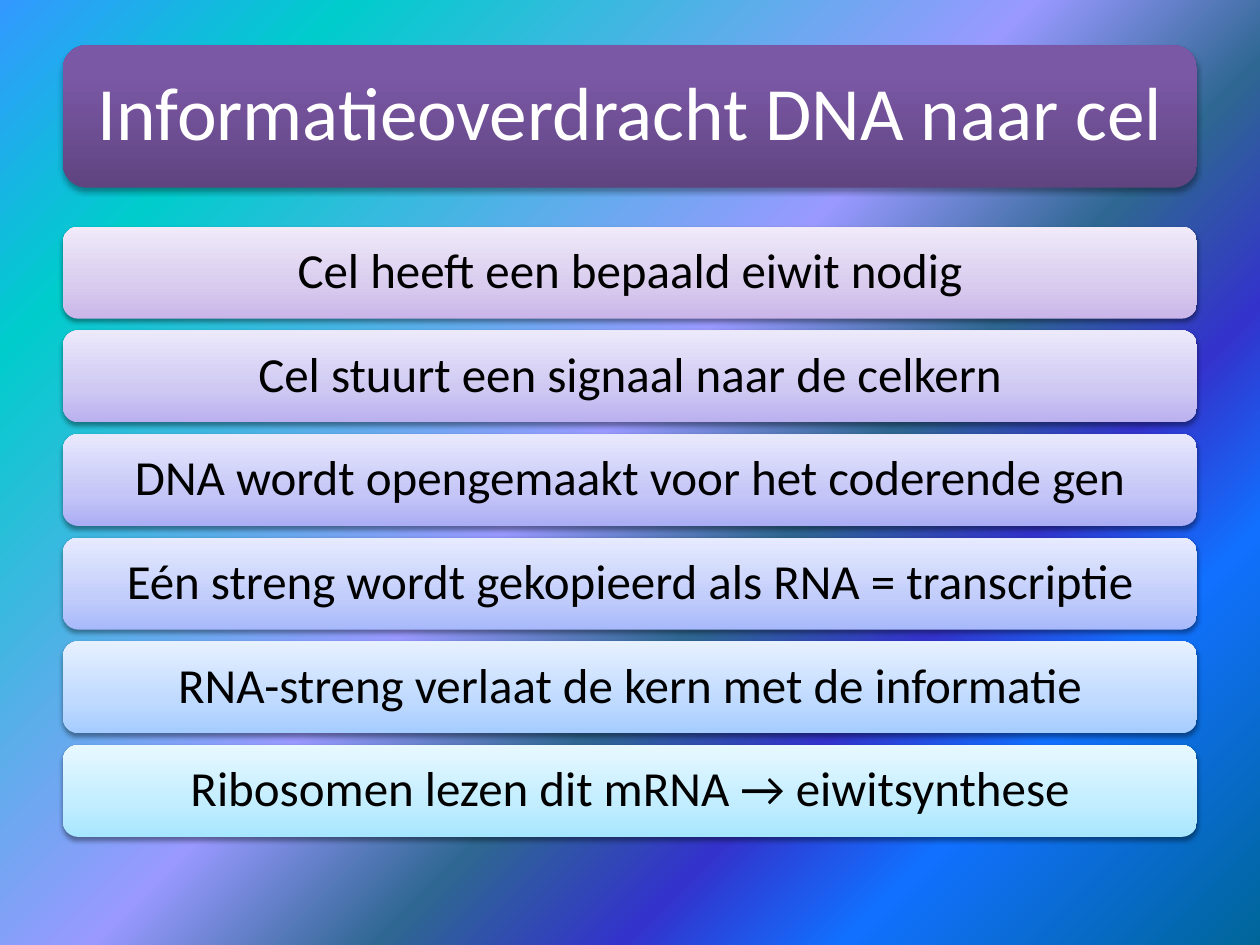
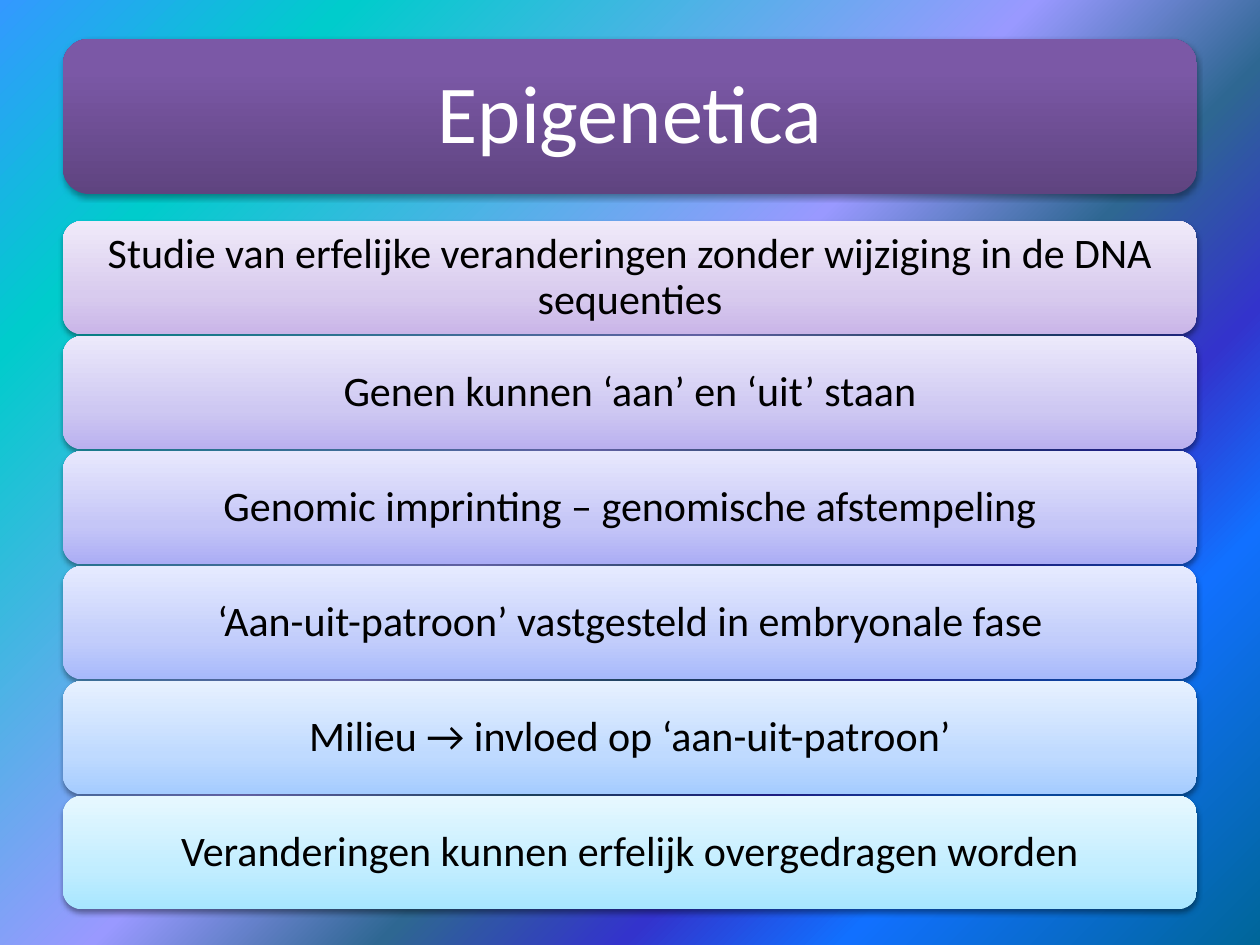
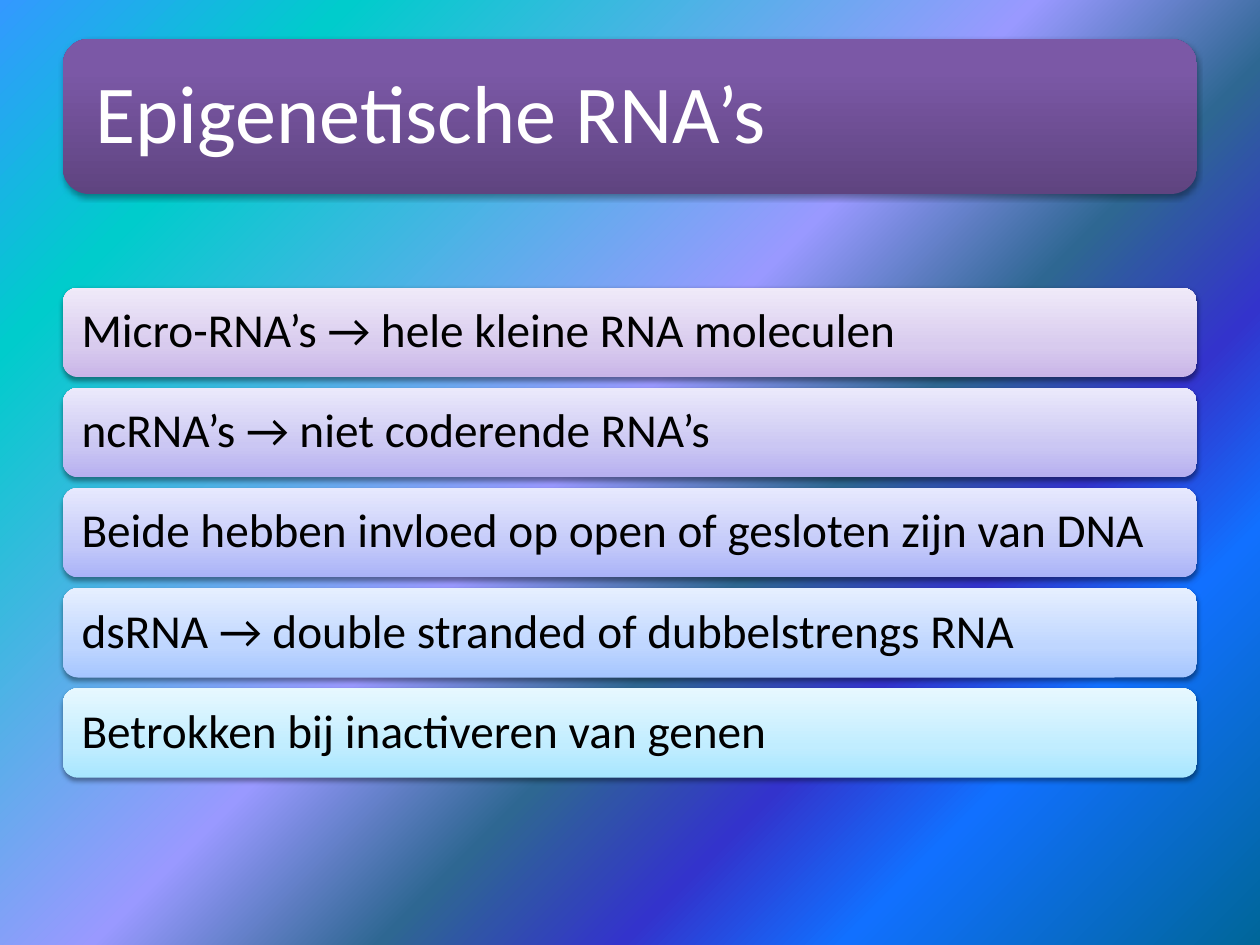
import pptx
import pptx.dml.color
import pptx.enum.shapes
import pptx.enum.text
import pptx.oxml.ns
import pptx.util
from lxml import etree

COLUMNS, ROWS = 20, 30
MARGIN, CONTENT_WIDTH = 1, 18
TITLE_CENTRE = 3.7

CENTRE = pptx.enum.text.PP_ALIGN.CENTER
LEFT = pptx.enum.text.PP_ALIGN.LEFT

BACKGROUND = [(0, "3399FF"), (16, "00CCCC"), (47, "9999FF"), (60, "2E6792"),
              (71, "3333CC"), (81, "1170FF"), (100, "006699")]
TITLE_BAND = [(0, "5F4480"), (80, "7B58A6"), (100, "7C57A8")]

# Dark, middle and light tone of each bar, from purple to cyan.
PURPLE = ("C9B5E8", "D8CBEE", "F0EAF9")
CYAN = ("A7E6FF", "C1EDFF", "E7F8FF")
SIX_TONES = [PURPLE, ("BAB0EF", "CEC8F2", "ECE9FB"), ("ABADF5", "C5C6F7", "E8E8FD"),
             ("A7B9FB", "C2CDFB", "E6EBFF"), ("A5CCFF", "BFDAFF", "E7F1FF"), CYAN]
FIVE_TONES = [PURPLE, ("B6AFF0", "CBC7F3", "EBE9FB"), ("A9B2F8", "C3C9F9", "E7E9FE"),
              ("A5C6FF", "BFD6FF", "E6EFFF"), CYAN]


def colour(code):
    return pptx.dml.color.RGBColor.from_string(code)


def add_element(parent, tag, **attributes):
    element = etree.SubElement(parent, pptx.oxml.ns.qn(tag))
    for name, value in attributes.items():
        element.set(name, str(value))
    return element


def set_gradient(fill, owner, stops, angle):
    """Fill with any number of (percent, colour) stops; owner is the XML around the fill."""
    fill.gradient()
    fill.gradient_angle = angle
    stop_list = owner.find(".//" + pptx.oxml.ns.qn("a:gsLst"))
    for stop in list(stop_list):
        stop_list.remove(stop)
    for percent, code in stops:
        stop = add_element(stop_list, "a:gs", pos=percent * 1000)
        add_element(stop, "a:srgbClr", val=code)


class Deck:
    def __init__(self):
        self.presentation = pptx.Presentation()
        self.presentation.slide_width = pptx.util.Inches(10)
        self.presentation.slide_height = pptx.util.Inches(7.5)
        master = self.presentation.slide_master
        set_gradient(master.background.fill, master.element, BACKGROUND, 315)
        self.slide = None

    def frame(self, top, height):
        """Left, top, width and height of a full-width block, from grid rows."""
        column = self.presentation.slide_width / COLUMNS
        row = self.presentation.slide_height / ROWS
        return [round(length) for length in
                (MARGIN * column, top * row, CONTENT_WIDTH * column, height * row)]

    def set_text(self, shape, text, size, code, alignment, extra_inset=0):
        text_frame = shape.text_frame
        text_frame.text = text
        text_frame.word_wrap = True
        text_frame.auto_size = pptx.enum.text.MSO_AUTO_SIZE.NONE
        text_frame.vertical_anchor = pptx.enum.text.MSO_ANCHOR.MIDDLE
        inset = pptx.util.Pt(0.3 * size + extra_inset)
        text_frame.margin_left = text_frame.margin_right = inset
        text_frame.margin_top = text_frame.margin_bottom = inset
        paragraph = text_frame.paragraphs[0]
        paragraph.alignment = alignment
        paragraph.line_spacing = 0.9
        paragraph.font.name = "Calibri"
        paragraph.font.size = pptx.util.Pt(size)
        paragraph.font.color.rgb = colour(code)

    def band(self, top, height, stops, shadow_distance, shadow_opacity):
        shape = self.slide.shapes.add_shape(
            pptx.enum.shapes.MSO_SHAPE.ROUNDED_RECTANGLE, *self.frame(top, height))
        set_gradient(shape.fill, shape.element, stops, 90)
        shape.line.fill.background()
        shape.shadow.inherit = False
        effects = shape.element.spPr.find(pptx.oxml.ns.qn("a:effectLst"))
        shadow = add_element(effects, "a:outerShdw", blurRad=pptx.util.Pt(3.1),
                             dist=pptx.util.Pt(shadow_distance), dir=5400000, rotWithShape=0)
        black = add_element(shadow, "a:srgbClr", val="000000")
        add_element(black, "a:alpha", val=shadow_opacity * 1000)
        return shape

    def title_slide(self, text, size, height, alignment):
        """Start a slide whose title stands on a purple band."""
        self.slide = self.presentation.slides.add_slide(self.presentation.slide_layouts[5])
        top = TITLE_CENTRE - height / 2
        band = self.band(top, height, TITLE_BAND, 1.8, 35)
        title = self.slide.shapes.title
        title.left, title.top, title.width, title.height = self.frame(top, height)
        band.element.addnext(title.element)
        self.set_text(title, text, size, "FFFFFF", alignment, extra_inset=4.3)

    def bars(self, texts, tones, top, height, pitch, size, alignment):
        for index, (text, tone) in enumerate(zip(texts, tones)):
            bar = self.band(top + index * pitch, height, zip((0, 35, 100), tone), 1.6, 38)
            self.set_text(bar, text, size, "000000", alignment)


def main():
    deck = Deck()

    deck.title_slide("Informatieoverdracht DNA naar cel", 43, 4.52, CENTRE)
    deck.bars(["Cel heeft een bepaald eiwit nodig",
               "Cel stuurt een signaal naar de celkern",
               "DNA wordt opengemaakt voor het coderende gen",
               "Eén streng wordt gekopieerd als RNA = transcriptie",
               "RNA-streng verlaat de kern met de informatie",
               "Ribosomen lezen dit mRNA → eiwitsynthese"],
              SIX_TONES, top=7.2, height=2.92, pitch=3.29, size=28, alignment=CENTRE)

    deck.title_slide("Epigenetica", 47, 4.92, CENTRE)
    deck.bars(["Studie van erfelijke veranderingen zonder wijziging in de DNA sequenties",
               "Genen kunnen ‘aan’ en ‘uit’ staan",
               "Genomic imprinting – genomische afstempeling",
               "‘Aan-uit-patroon’ vastgesteld in embryonale fase",
               "Milieu → invloed op ‘aan-uit-patroon’",
               "Veranderingen kunnen erfelijk overgedragen worden"],
              SIX_TONES, top=7.02, height=3.6, pitch=3.65, size=24, alignment=CENTRE)

    deck.title_slide("Epigenetische RNA’s", 47, 4.92, LEFT)
    deck.bars(["Micro-RNA’s → hele kleine RNA moleculen",
               "ncRNA’s → niet coderende RNA’s",
               "Beide hebben invloed op open of gesloten zijn van DNA",
               "dsRNA → double stranded of dubbelstrengs RNA",
               "Betrokken bij inactiveren van genen"],
              FIVE_TONES, top=9.13, height=2.84, pitch=3.18, size=27, alignment=LEFT)

    deck.presentation.save("out.pptx")


if __name__ == "__main__":
    main()
